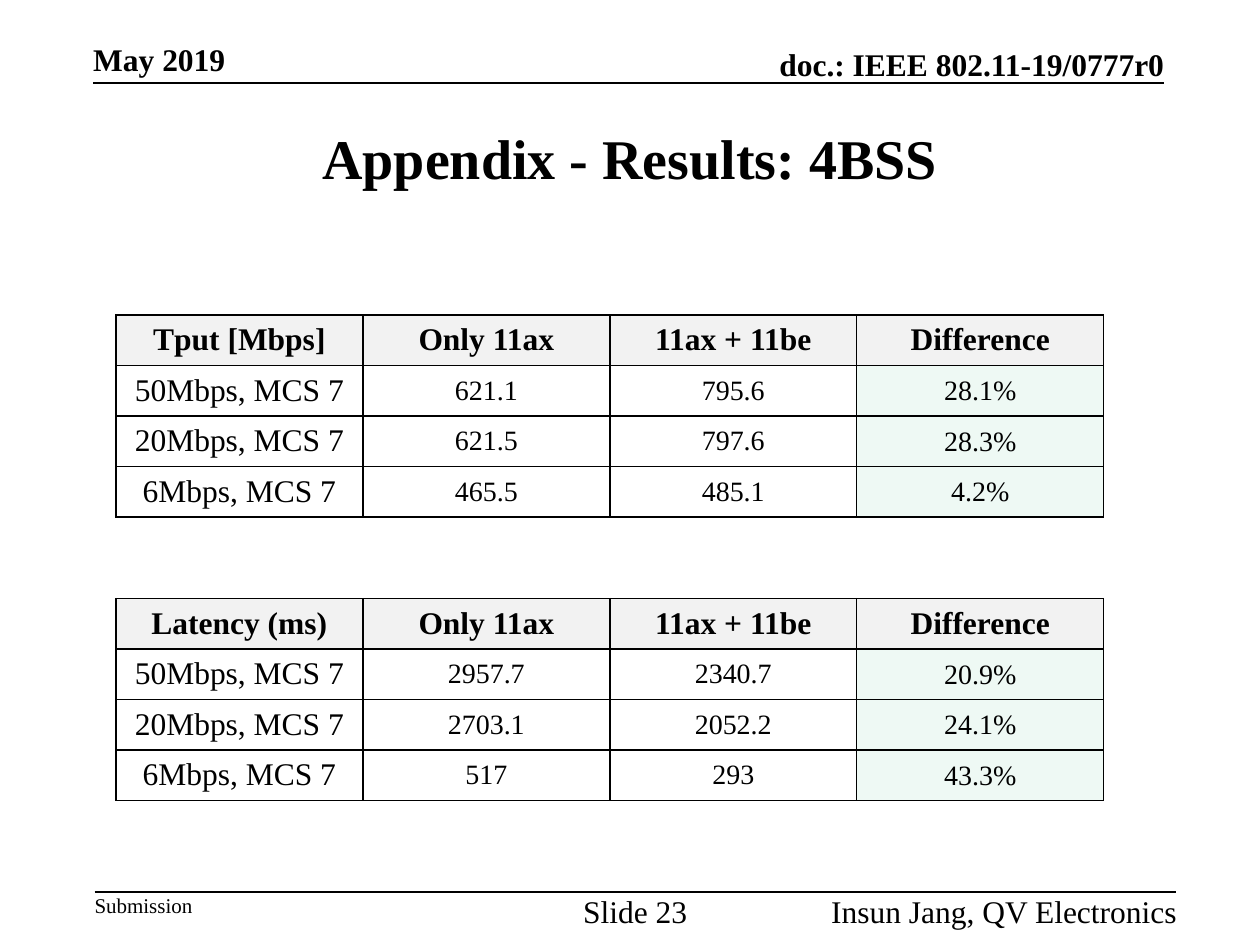
"""Build the appendix slide with the throughput and latency tables for 4BSS."""
from pptx import Presentation
from pptx.dml.color import RGBColor
from pptx.enum.shapes import MSO_CONNECTOR as Link
from pptx.enum.text import MSO_ANCHOR as Anchor, MSO_AUTO_SIZE as Fit, PP_ALIGN as Align
from pptx.oxml import parse_xml
from pptx.oxml.ns import nsdecls
from pptx.util import Pt

BLACK = RGBColor(0x00, 0x00, 0x00)
GREY = RGBColor(0xF2, 0xF2, 0xF2)
GREEN = RGBColor(0xEE, 0xF9, 0xF4)
FACE = "Times New Roman"

TITLE = "Appendix - Results: 4BSS"
LABELS = [
    ("doc.: IEEE 802.11-19/0777r0", (406.8, 25.92, 258.48, 21.6),
     dict(bold=True, align=Align.RIGHT, anchor=Anchor.BOTTOM)),
    ("May 2019", (53.28, 23.04, 76.32, 21.6), dict(bold=True, anchor=Anchor.BOTTOM)),
    ("Submission", (54, 509.76, 56.16, 14.4), dict(size=12)),
    ("Insun Jang, QV Electronics", (460, 509.76, 212.5, 21.6), dict(align=Align.RIGHT)),
    ("Slide 23", (328, 509.76, 70, 21.6), dict(align=Align.CENTER)),
]
RULES = [(53.28, 665.28, 47.52), (54, 671.76, 509.76)]
HEADS = ["Only 11ax", "11ax + 11be", "Difference"]
TABLES = [
    (180, [
        ["Tput [Mbps]", *HEADS],
        ["50Mbps, MCS 7", "621.1", "795.6", "28.1%"],
        ["20Mbps, MCS 7", "621.5", "797.6", "28.3%"],
        ["6Mbps, MCS 7", "465.5", "485.1", "4.2%"],
    ]),
    (342, [
        ["Latency (ms)", *HEADS],
        ["50Mbps, MCS 7", "2957.7", "2340.7", "20.9%"],
        ["20Mbps, MCS 7", "2703.1", "2052.2", "24.1%"],
        ["6Mbps, MCS 7", "517", "293", "43.3%"],
    ]),
]
LEFT, COL, ROW = 66.24, 141.12, 28.8


def write(frame, text, size=18, bold=False, align=Align.LEFT, anchor=Anchor.TOP):
    frame.word_wrap = True
    frame.vertical_anchor = anchor
    para = frame.paragraphs[0]
    para.alignment = align
    run = para.add_run()
    run.text = text
    font = run.font
    font.name, font.size, font.bold = FACE, Pt(size), bold
    font.color.rgb = BLACK


def pad(item, x, y):
    item.margin_left = item.margin_right = Pt(x)
    item.margin_top = item.margin_bottom = Pt(y)


def edge(cell):
    props = cell._tc.get_or_add_tcPr()
    for spot, side in enumerate(("lnL", "lnR", "lnT", "lnB")):
        props.insert(spot, parse_xml(
            f'<a:{side} {nsdecls("a")} w="{Pt(1)}"><a:solidFill>'
            f'<a:srgbClr val="{BLACK}"/></a:solidFill></a:{side}>'))


def add_grid(slide, top, rows):
    count, wide = len(rows), len(rows[0])
    table = slide.shapes.add_table(
        count, wide, Pt(LEFT), Pt(top), Pt(COL * wide), Pt(ROW * count)).table
    table.first_row = table.horz_banding = False
    for col in table.columns:
        col.width = Pt(COL)
    for r, row in enumerate(rows):
        table.rows[r].height = Pt(ROW)
        for c, text in enumerate(row):
            cell = table.cell(r, c)
            head, value = r == 0, r > 0 and c > 0
            last = value and c == wide - 1
            if head or last:
                cell.fill.solid()
                cell.fill.fore_color.rgb = GREY if head else GREEN
            else:
                cell.fill.background()
            edge(cell)
            write(cell.text_frame, text, size=16 if value else 18,
                  bold=head, align=Align.CENTER)
            cell.vertical_anchor = Anchor.MIDDLE
            if value:
                pad(cell, 0, 0)
            else:
                pad(cell, 7.2, 3.6)
            if last:
                cell.margin_left = cell.margin_right = cell.margin_top = Pt(0.75)


def main():
    deck = Presentation()
    deck.slide_width, deck.slide_height = Pt(720), Pt(540)
    slide = deck.slides.add_slide(deck.slide_layouts[5])

    title = slide.shapes.title
    title.left, title.top, title.width, title.height = Pt(54), Pt(54), Pt(612), Pt(72)
    title.text_frame.auto_size = Fit.NONE
    write(title.text_frame, TITLE, size=32, bold=True,
          align=Align.CENTER, anchor=Anchor.MIDDLE)

    for text, box, style in LABELS:
        frame = slide.shapes.add_textbox(*map(Pt, box)).text_frame
        pad(frame, 0, 0)
        write(frame, text, **style)

    for start, end, y in RULES:
        rule = slide.shapes.add_connector(Link.STRAIGHT, Pt(start), Pt(y), Pt(end), Pt(y))
        rule.line.color.rgb, rule.line.width = BLACK, Pt(1)
        rule._element.spPr.append(parse_xml(f'<a:effectLst {nsdecls("a")}/>'))

    for top, rows in TABLES:
        add_grid(slide, top, rows)
    deck.save("out.pptx")


if __name__ == "__main__":
    main()
